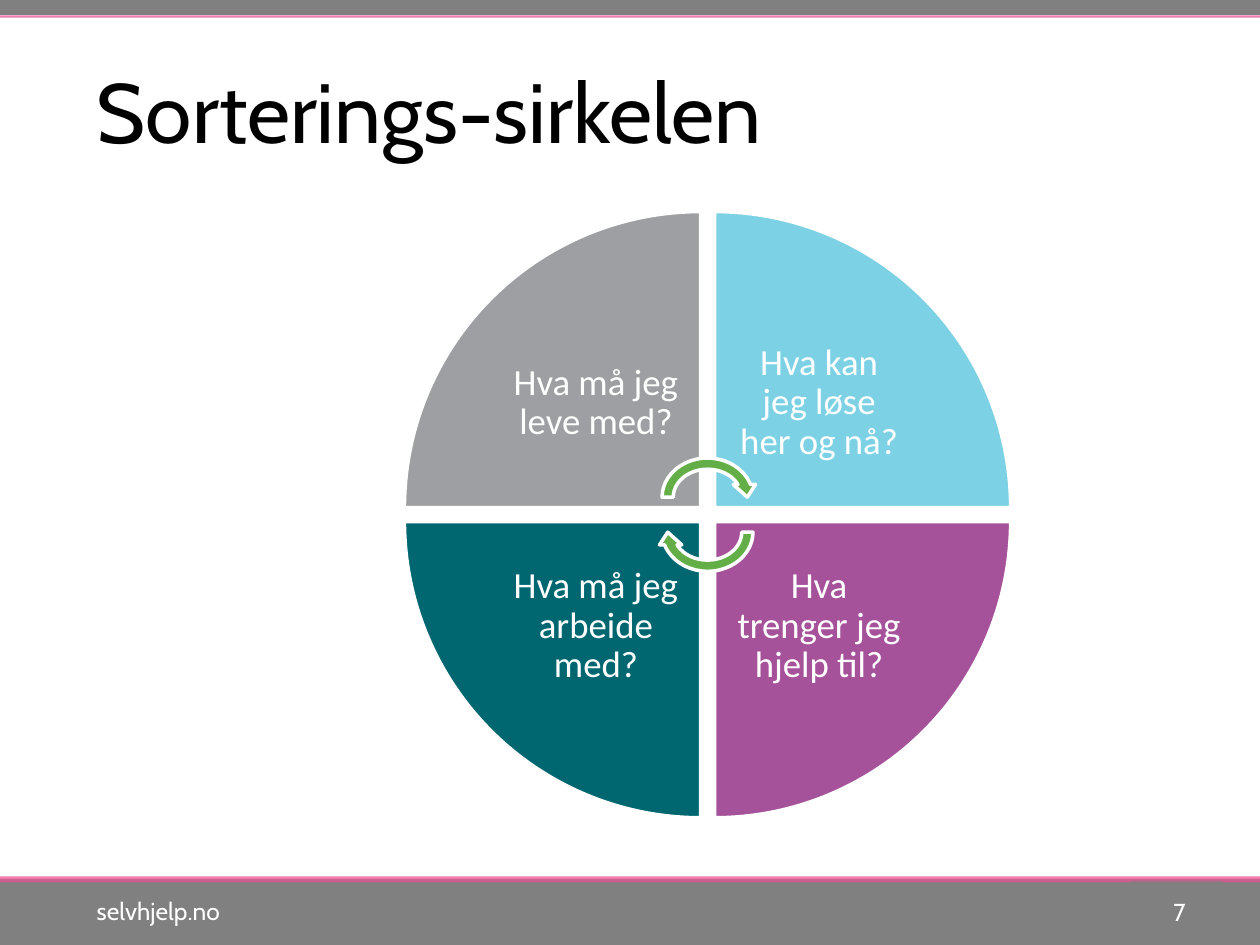
from dataclasses import dataclass

from lxml import etree
from pptx import Presentation
from pptx.dml.color import RGBColor
from pptx.enum import shapes, text
from pptx.oxml import ns
from pptx.util import Pt


@dataclass(frozen=True)
class Theme:
    font: str = "Cabin"
    wheel_font: str = "Calibri"
    title_size: float = 48
    footer_size: float = 14
    wheel_size: float = 21
    ink: str = "000000"
    white: str = "FFFFFF"
    band: str = "808080"
    accent: str = "E75294"
    arrow: str = "63AE46"


THEME = Theme()
CENTER_X, CENTER_Y = 404.3, 294.1
HALF_GAP, RADIUS, LABEL = 4, 169.2, 119.5
ARROW_W, ARROW_H, ARROW_SHIFT = 58.3, 51.1, 10

# Question, colour, horizontal side, vertical side, rotation
QUARTERS = [
    ("Hva må jeg leve med?", "9D9FA2", -1, -1, 0),
    ("Hva kan jeg løse her og nå?", "7DD1E4", 1, -1, 90),
    ("Hva trenger jeg hjelp til?", "A5529A", 1, 1, 180),
    ("Hva må jeg arbeide med?", "006771", -1, 1, 270),
]


def set_alpha(fill, percent):
    """Make a solid fill partly transparent."""
    color = fill._xPr.find(ns.qn("a:solidFill"))[0]
    etree.SubElement(color, ns.qn("a:alpha"), val=str(percent * 1000))


def style_text(paragraph, font, size, color, align):
    paragraph.alignment = align
    paragraph.font.name = font
    paragraph.font.size = Pt(size)
    paragraph.font.color.rgb = RGBColor.from_string(color)


def add_rule(slide, x1, x2, y, color, width, alpha=100):
    rule = slide.shapes.add_connector(
        shapes.MSO_CONNECTOR.STRAIGHT, Pt(x1), Pt(y), Pt(x2), Pt(y))
    rule.line.width = Pt(width)
    rule.line.color.rgb = RGBColor.from_string(color)
    if alpha < 100:
        set_alpha(rule.line.fill, alpha)
    etree.SubElement(rule._element.spPr, ns.qn("a:effectLst"))


def add_figure(slide, preset, box, color, rotation=0, outlined=True):
    figure = slide.shapes.add_shape(preset, *map(Pt, box))
    figure.shadow.inherit = False
    figure.rotation = rotation
    figure.fill.solid()
    figure.fill.fore_color.rgb = RGBColor.from_string(color)
    if outlined:
        figure.line.color.rgb = RGBColor.from_string(THEME.white)
        figure.line.width = Pt(2)
    else:
        figure.line.fill.background()
    return figure


def add_footer_text(slide, words, box, align):
    frame = slide.shapes.add_textbox(*map(Pt, box)).text_frame
    frame.word_wrap = True
    frame.text = words
    style_text(frame.paragraphs[0], THEME.font, THEME.footer_size, THEME.white, align)


def add_question(slide, words, box):
    frame = slide.shapes.add_textbox(*map(Pt, box)).text_frame
    frame.word_wrap = True
    frame.vertical_anchor = text.MSO_ANCHOR.MIDDLE
    frame.margin_left = frame.margin_right = Pt(11.5)
    frame.margin_top = frame.margin_bottom = Pt(11.5)
    frame.text = words
    question = frame.paragraphs[0]
    question.line_spacing = 0.9
    style_text(question, THEME.wheel_font, THEME.wheel_size, THEME.white,
               text.PP_ALIGN.CENTER)


def quarter_box(side_x, side_y, size):
    """Square that touches the centre gap on the given sides."""
    left = CENTER_X + side_x * HALF_GAP - (size if side_x < 0 else 0)
    top = CENTER_Y + side_y * HALF_GAP - (size if side_y < 0 else 0)
    return left, top, size, size


def add_bands(slide):
    add_rule(slide, -3, 720, 525, THEME.band, 45)
    add_rule(slide, -3, 721.5, 3.6, THEME.band, 10)
    add_rule(slide, -4, 720, 502.5, THEME.accent, 3.5, 75)
    add_rule(slide, 0, 724, 9.4, THEME.accent, 1.25, 75)
    number_plate = add_figure(slide, shapes.MSO_SHAPE.ROUNDED_RECTANGLE,
                              (643.7, 503.3, 56.9, 21.6), THEME.band, outlined=False)
    set_alpha(number_plate.fill, 60)
    add_footer_text(slide, "7", (643.7, 509, 41, 24.5), text.PP_ALIGN.RIGHT)
    add_footer_text(slide, "selvhjelp.no", (48.2, 508.3, 209.5, 24.5),
                    text.PP_ALIGN.LEFT)


def add_wheel(slide):
    for words, color, side_x, side_y, rotation in QUARTERS:
        add_figure(slide, shapes.MSO_SHAPE.PIE_WEDGE,
                   quarter_box(side_x, side_y, RADIUS), color, rotation)
        add_question(slide, words, quarter_box(side_x, side_y, LABEL))
    for side_y, rotation in ((-1, 0), (1, 180)):
        top = CENTER_Y + side_y * ARROW_SHIFT - ARROW_H / 2
        add_figure(slide, shapes.MSO_SHAPE.CIRCULAR_ARROW,
                   (CENTER_X - ARROW_W / 2, top, ARROW_W, ARROW_H),
                   THEME.arrow, rotation)


def set_title(slide, words):
    title = slide.shapes.title
    title.left, title.top, title.width, title.height = map(Pt, (48.2, 30.2, 430.6, 65.5))
    frame = title.text_frame
    frame.text = words
    frame.auto_size = text.MSO_AUTO_SIZE.NONE
    frame.vertical_anchor = text.MSO_ANCHOR.TOP
    style_text(frame.paragraphs[0], THEME.font, THEME.title_size, THEME.ink,
               text.PP_ALIGN.LEFT)


def main():
    deck = Presentation()
    deck.slide_width, deck.slide_height = Pt(720), Pt(540)
    slide = deck.slides.add_slide(deck.slide_layouts[5])  # title only

    # Header and footer
    add_bands(slide)
    # Sorting circle
    add_wheel(slide)
    # Title
    set_title(slide, "Sorterings-sirkelen")

    deck.save("out.pptx")


if __name__ == "__main__":
    main()
